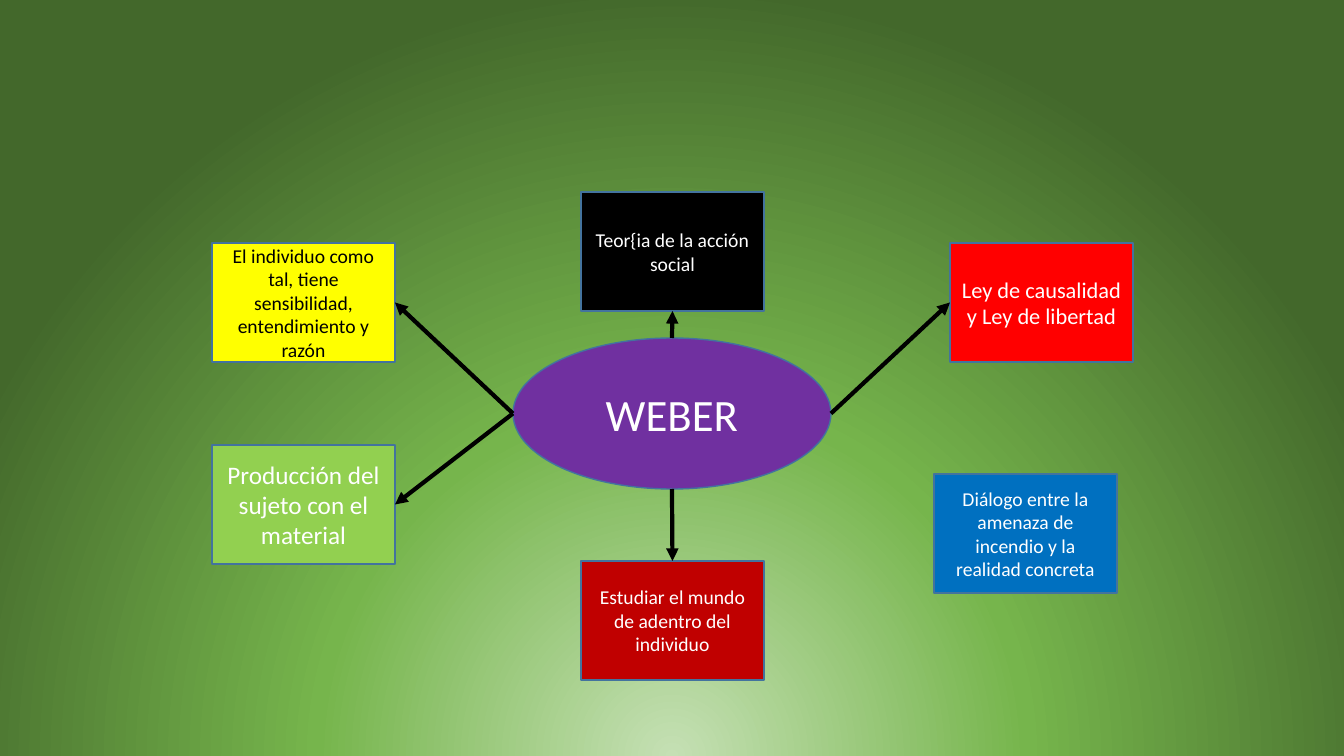
from lxml.etree import SubElement
from pptx import Presentation
from pptx.dml.color import RGBColor
from pptx.enum.shapes import MSO_CONNECTOR, MSO_SHAPE
from pptx.enum.text import MSO_ANCHOR, PP_ALIGN
from pptx.oxml import parse_xml
from pptx.oxml.ns import nsdecls, qn
from pptx.util import Pt

WIDE, HIGH = 1344, 756
SCALE = 12192000 / WIDE
TOP, LEFT, BOTTOM, RIGHT = range(4)


def emu(*sizes):
    """Turn px into EMU."""
    return [round(size * SCALE) for size in sizes]


def add_node(kind, box, text, size, fill, color="FFFFFF"):
    node = slide.shapes.add_shape(kind, *emu(*box))
    node.shadow.inherit = False
    node.fill.solid()
    node.fill.fore_color.rgb = RGBColor.from_string(fill)
    node.line.color.rgb = RGBColor.from_string("43739E")
    node.line.width = Pt(1)
    frame = node.text_frame
    frame.word_wrap = True
    frame.vertical_anchor = MSO_ANCHOR.MIDDLE
    para = frame.paragraphs[0]
    para.text = text
    para.alignment = PP_ALIGN.CENTER
    para.font.name = "Calibri"
    para.font.size = Pt(size)
    para.font.color.rgb = RGBColor.from_string(color)
    return node


deck = Presentation()
deck.slide_width, deck.slide_height = emu(WIDE, HIGH)
slide = deck.slides.add_slide(deck.slide_layouts[6])

# Radial background, centred below the slide
stops = "".join(
    f'<a:gs pos="{pos * 1000}"><a:srgbClr val="{color}"/></a:gs>'
    for pos, color in [(0, "C5E0B4"), (46, "76B54C"), (100, "43682B")]
)
slide.element.cSld.insert(0, parse_xml(
    f'<p:bg {nsdecls("p", "a")}><p:bgPr><a:gradFill rotWithShape="1">'
    f'<a:gsLst>{stops}</a:gsLst><a:path path="circle">'
    '<a:fillToRect l="50000" t="130000" r="50000" b="-30000"/></a:path>'
    '</a:gradFill><a:effectLst/></p:bgPr></p:bg>'
))

# Central idea and the middle of each of its sides
x, y, w, h = 513, 338, 318, 151
add_node(MSO_SHAPE.OVAL, (x, y, w, h), "WEBER", 32, "7030A0")
ports = {
    TOP: (x + w / 2, y),
    LEFT: (x, y + h / 2),
    BOTTOM: (x + w / 2, y + h),
    RIGHT: (x + w, y + h / 2),
}

# Left, top, text, size, fill, text colour, side the arrow leaves from
ideas = [
    (212, 243, "El individuo como tal, tiene sensibilidad, entendimiento y razón",
     14, "FFFF00", "000000", LEFT),
    (950, 243, "Ley de causalidad y Ley de libertad", 16, "FF0000", "FFFFFF", RIGHT),
    (212, 445, "Producción del sujeto con el material", 18, "92D050", "FFFFFF", LEFT),
    (934, 474, "Diálogo entre la amenaza de incendio y la realidad concreta",
     14, "0070C0", "FFFFFF", None),
    (581, 561, "Estudiar el mundo de adentro del individuo",
     14, "C00000", "FFFFFF", BOTTOM),
    (581, 192, "Teor{ia de la acción social", 14, "000000", "FFFFFF", TOP),
]
for left, top, text, size, fill, color, side in ideas:
    node = add_node(MSO_SHAPE.RECTANGLE, (left, top, 183, 119), text, size, fill, color)
    if side is None:
        continue
    start = emu(*ports[side])
    arrow = slide.shapes.add_connector(MSO_CONNECTOR.STRAIGHT, *start, *start)
    arrow.end_connect(node, (side + 2) % 4)
    arrow.line.color.rgb = RGBColor.from_string("000000")
    arrow.line.width = Pt(3)
    SubElement(arrow.line._get_or_add_ln(), qn("a:tailEnd"), type="triangle")
    SubElement(arrow.element.spPr, qn("a:effectLst"))

deck.save("out.pptx")
